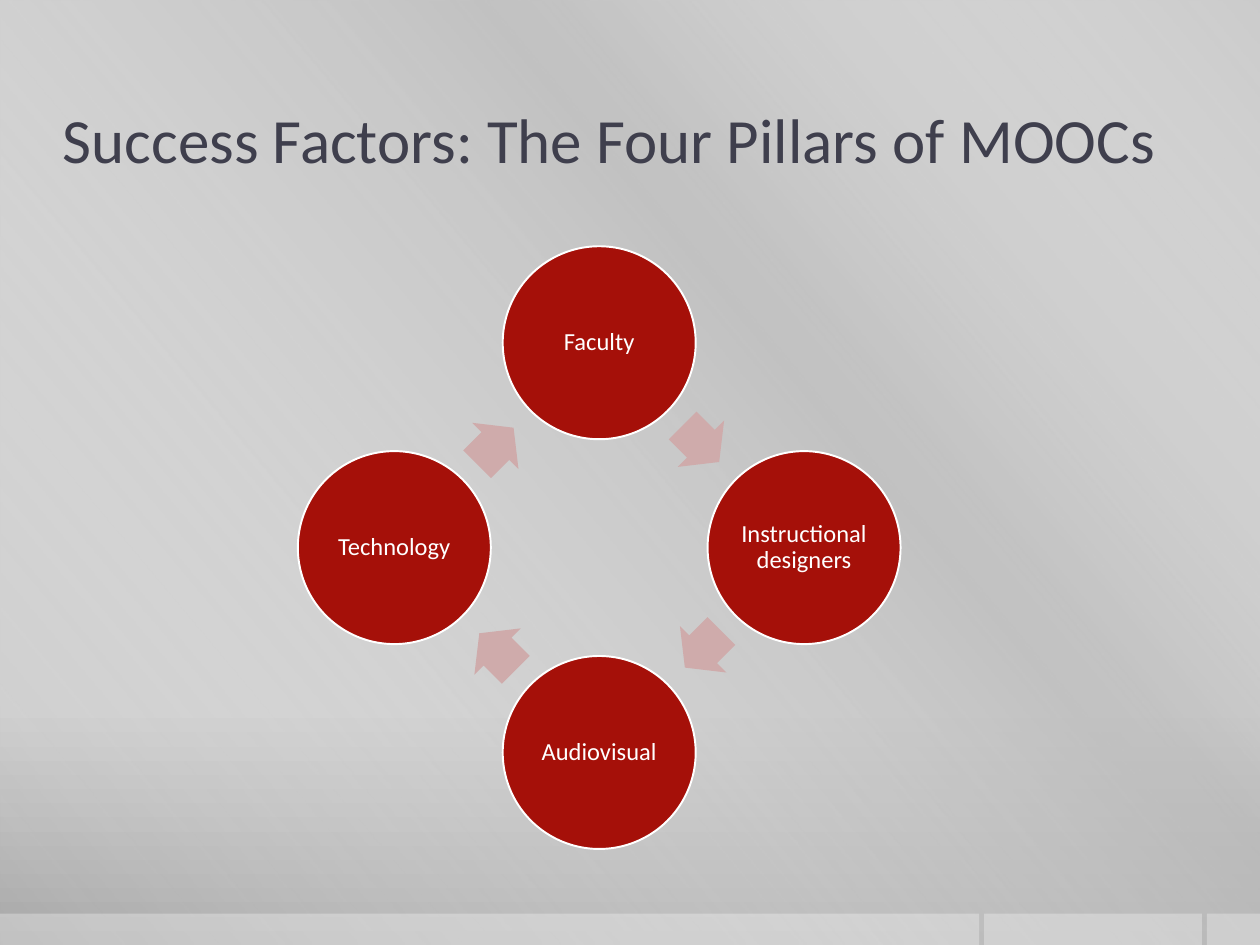
from math import cos, radians, sin

from lxml.etree import SubElement
from pptx import Presentation
from pptx.dml.color import RGBColor
from pptx.enum.shapes import MSO_SHAPE as Shape
from pptx.enum.text import MSO_ANCHOR as Anchor, PP_ALIGN as Align
from pptx.oxml import parse_xml
from pptx.oxml.ns import nsdecls, qn
from pptx.util import Cm, Pt

WIDTH, HEIGHT = 25.4, 19.05
RING_X, RING_Y = 12.08, 11.04
PILLAR_RADIUS, ARROW_RADIUS = 4.13, 2.93
PILLAR_SIZE = 3.89
ARROW_LENGTH, ARROW_BREADTH = 1.04, 1.32
ARROW_LAG = 0.6
PILLARS = ["Faculty", "Instructional designers", "Audiovisual", "Technology"]
FLOOR_TOP = 18.42
FLOOR_PANELS = [(24.33, WIDTH), (19.84, 24.23), (0, 19.74)]
BACKDROP = [(0, "CBCBCB", 100), (76, "C8C8C8", 100), (100, "A7A7A7", 100)]
SHEEN = [(0, "FFFFFF", 0), (34, "BFBFBF", 61), (38, "BFBFBF", 76), (100, "FFFFFF", 0)]


def color(value):
    """Turn a hex string into a colour."""
    return RGBColor.from_string(value)


def set_gradient(properties, stops, angle):
    """Replace the solid fill in a properties element by a linear gradient."""
    stop_xml = "".join(
        f'<a:gs pos="{position * 1000}"><a:srgbClr val="{value}">'
        f'<a:alpha val="{opacity * 1000}"/></a:srgbClr></a:gs>'
        for position, value, opacity in stops
    )
    gradient = parse_xml(
        f'<a:gradFill {nsdecls("a")} rotWithShape="1"><a:gsLst>{stop_xml}</a:gsLst>'
        f'<a:lin ang="{angle * 60000}" scaled="0"/></a:gradFill>'
    )
    properties.replace(properties.find(qn("a:solidFill")), gradient)


def add_filled(slide, kind, left, top, width, height, fill, opacity=100):
    """Add a flat preset shape without an outline."""
    shape = slide.shapes.add_shape(kind, Cm(left), Cm(top), Cm(width), Cm(height))
    shape.shadow.inherit = False
    shape.fill.solid()
    shape.fill.fore_color.rgb = color(fill)
    shape.line.fill.background()
    if opacity < 100:
        tone = shape._element.spPr.find(qn("a:solidFill"))[0]
        SubElement(tone, qn("a:alpha"), val=str(opacity * 1000))
    return shape


def write(shape, text, size, fill, align, margins):
    """Write one middle-anchored paragraph with the given side and end margins."""
    frame = shape.text_frame
    frame.word_wrap = True
    frame.vertical_anchor = Anchor.MIDDLE
    frame.margin_left = frame.margin_right = Cm(margins[0])
    frame.margin_top = frame.margin_bottom = Cm(margins[1])
    paragraph = frame.paragraphs[0]
    paragraph.alignment = align
    run = paragraph.add_run()
    run.text = text
    run.font.name = "Calibri"
    run.font.size = Pt(size)
    run.font.color.rgb = color(fill)
    return paragraph


def add_backdrop(slide):
    """Paint the grey background, the diagonal sheen and the floor panels."""
    slide.background.fill.solid()
    set_gradient(slide._element.find(".//" + qn("p:bgPr")), BACKDROP, 90)
    sheen = add_filled(slide, Shape.RECTANGLE, 0, 0, WIDTH, HEIGHT, "FFFFFF")
    set_gradient(sheen._element.spPr, SHEEN, 140)
    for left, right in FLOOR_PANELS:
        add_filled(slide, Shape.RECTANGLE, left, FLOOR_TOP,
                   right - left, HEIGHT - FLOOR_TOP, "FFFFFF", 30)


def add_title(slide, text):
    """Add the slide title."""
    title = slide.shapes.add_textbox(Cm(1.27), Cm(1.52), Cm(22.86), Cm(2.54))
    write(title, text, 36, "3F3F4D", Align.LEFT, (0, 0.13))


def add_on_ring(slide, kind, angle, radius, width, height, fill):
    """Add a shape centred on the ring, with angles clockwise from the top."""
    center_x = RING_X + radius * sin(radians(angle))
    center_y = RING_Y - radius * cos(radians(angle))
    return add_filled(slide, kind, center_x - width / 2, center_y - height / 2,
                      width, height, fill)


def add_pillar(slide, name, angle):
    """Add one labelled circle of the cycle."""
    pillar = add_on_ring(slide, Shape.OVAL, angle, PILLAR_RADIUS,
                         PILLAR_SIZE, PILLAR_SIZE, "A51009")
    pillar.line.color.rgb = color("FFFFFF")
    pillar.line.width = Pt(1.1)
    label = write(pillar, name, 14, "FFFFFF", Align.CENTER, (0.05, 0.05))
    label.line_spacing = 0.9
    label.space_after = Pt(4.9)


def add_cycle_arrow(slide, angle):
    """Add the arrow that leads clockwise to the next circle."""
    arrow = add_on_ring(slide, Shape.RIGHT_ARROW, angle - ARROW_LAG, ARROW_RADIUS,
                        ARROW_LENGTH, ARROW_BREADTH, "CFABAB")
    arrow.adjustments[0] = 0.6
    arrow.adjustments[1] = 0.5
    arrow.rotation = angle


def main():
    """Build and save the slide."""
    deck = Presentation()
    deck.slide_width, deck.slide_height = Cm(WIDTH), Cm(HEIGHT)
    slide = deck.slides.add_slide(deck.slide_layouts[6])
    add_backdrop(slide)
    add_title(slide, "Success Factors: The Four Pillars of MOOCs")
    step = 360 / len(PILLARS)
    for index, name in enumerate(PILLARS):
        add_pillar(slide, name, index * step)
        add_cycle_arrow(slide, (index + 0.5) * step)
    deck.save("out.pptx")


if __name__ == "__main__":
    main()
